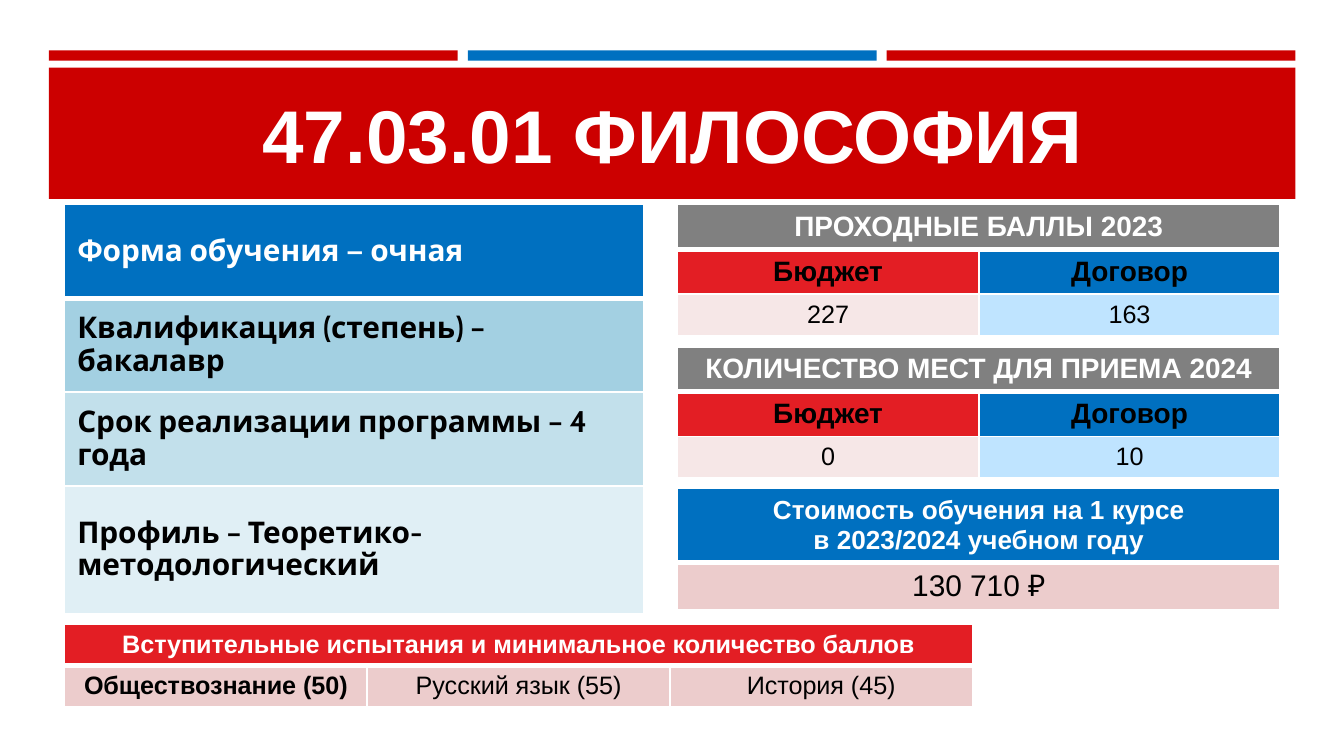
from lxml import etree
from pptx import Presentation
from pptx.dml.color import RGBColor
from pptx.enum.shapes import MSO_SHAPE as SHAPE
from pptx.enum.text import MSO_ANCHOR as ANCHOR, PP_ALIGN as ALIGN
from pptx.oxml.ns import qn
from pptx.util import Pt

WHITE = RGBColor(0xFF, 0xFF, 0xFF)
BLACK = RGBColor(0, 0, 0)
CRIMSON = RGBColor(0xCC, 0, 0)
RED = RGBColor(0xE3, 0x1E, 0x24)
BLUE = RGBColor(0, 0x70, 0xC0)
GREY = RGBColor(0x80, 0x80, 0x80)
PINK = RGBColor(0xEC, 0xCC, 0xCC)
PALE_PINK = RGBColor(0xF6, 0xE7, 0xE7)
PALE_BLUE = RGBColor(0xBF, 0xE4, 0xFF)
TEALS = [RGBColor(0xA3, 0xD0, 0xE2), RGBColor(0xC2, 0xE0, 0xEB), RGBColor(0xE0, 0xEF, 0xF5)]

MARGINS = {"margin_left": Pt(6.8), "margin_right": Pt(6.8),
           "margin_top": Pt(3), "margin_bottom": Pt(3)}


def set_attrs(obj, values):
    for name, value in values.items():
        setattr(obj, name, value)


def write(tf, text, size, color, bold=True, font="Arial", align=ALIGN.CENTER, spacing=None):
    for i, line in enumerate(text.split("\n")):
        p = tf.paragraphs[0] if i == 0 else tf.add_paragraph()
        set_attrs(p, {"alignment": align, "line_spacing": spacing})
        r = p.add_run()
        r.text = line
        set_attrs(r.font, {"name": font, "size": Pt(size), "bold": bold})
        r.font.color.rgb = color


def set_borders(cell, row):
    """White rules, with a thick one between the header and the first row."""
    widths = {"L": 1, "R": 1, "T": 3 if row == 1 else 1, "B": 3 if row == 0 else 1}
    tcPr = cell._tc.get_or_add_tcPr()
    for side, width in widths.items():
        ln = etree.SubElement(tcPr, qn(f"a:ln{side}"), w=str(Pt(width)))
        fill = etree.SubElement(ln, qn("a:solidFill"))
        etree.SubElement(fill, qn("a:srgbClr"), val=str(WHITE))


def add_grid(s, box, heights, rows):
    """rows holds lists of (text, fill, format); a short row is merged across."""
    x, y, w = box
    n_cols = max(len(row) for row in rows)
    table = s.shapes.add_table(len(rows), n_cols, Pt(x), Pt(y), Pt(w), Pt(sum(heights))).table
    table.horz_banding = False
    for col in table.columns:
        col.width = Pt(w / n_cols)
    for i, (row, height) in enumerate(zip(rows, heights)):
        table.rows[i].height = Pt(height)
        for j in range(n_cols):
            cell = table.cell(i, j)
            set_borders(cell, i)
            cell.fill.solid()
            cell.fill.fore_color.rgb = row[min(j, len(row) - 1)][1]
        if len(row) < n_cols:
            table.cell(i, 0).merge(table.cell(i, n_cols - 1))
        for j, (text, _, fmt) in enumerate(row):
            cell = table.cell(i, j)
            set_attrs(cell, {"vertical_anchor": ANCHOR.MIDDLE, **MARGINS})
            write(cell.text_frame, text, **fmt)


def add_bar(s, x, y, w, h, color):
    sp = s.shapes.add_shape(SHAPE.RECTANGLE, Pt(x), Pt(y), Pt(w), Pt(h))
    sp.shadow.inherit = False
    sp.fill.solid()
    sp.fill.fore_color.rgb = color
    sp.line.fill.background()


def add_header(s, x, y, w, title):
    # Three accent bars over the title band
    gap = 5.4
    bar_w = (w - 2 * gap) / 3
    for i, color in enumerate([CRIMSON, BLUE, CRIMSON]):
        add_bar(s, x + i * (bar_w + gap), y, bar_w, 5.5, color)
    add_bar(s, x, y + 9.2, w, 70.4, CRIMSON)
    # Title
    tb = s.shapes.add_textbox(Pt(x + 8.4), Pt(y + 14.8), Pt(w - 16.8), Pt(59.8))
    tf = tb.text_frame
    set_attrs(tf, {"word_wrap": True, "vertical_anchor": ANCHOR.MIDDLE})
    write(tf, title, 40, WHITE)


def add_programme(s, box):
    lines = ["Форма обучения — очная", "Квалификация (степень) – бакалавр",
             "Срок реализации программы – 4 года", "Профиль – Теоретико-методологический"]
    fmt = {"size": 16, "font": "Cabin", "align": ALIGN.LEFT, "spacing": 0.9}
    rows = [[(text, fill, {**fmt, "color": BLACK if i else WHITE})]
            for i, (text, fill) in enumerate(zip(lines, [BLUE, *TEALS]))]
    add_grid(s, box, [50.3, 50.3, 50.3, 68.4], rows)


def add_places(s, box, heading, budget, contract):
    label = {"size": 15, "color": BLACK}
    value = {"size": 13.5, "color": BLACK, "bold": False}
    add_grid(s, box, [23.6, 23.6, 22.3], [
        [(heading, GREY, {"size": 15, "color": WHITE})],
        [("Бюджет", RED, label), ("Договор", BLUE, label)],
        [(budget, PALE_PINK, value), (contract, PALE_BLUE, value)],
    ])


def add_cost(s, box):
    add_grid(s, box, [38.4, 24.6], [
        [("Стоимость обучения на 1 курсе\nв 2023/2024 учебном году", BLUE,
          {"size": 14, "color": WHITE})],
        [("130 710 ₽", PINK, {"size": 16, "color": BLACK, "bold": False})],
    ])


def add_exams(s, box):
    exams = ["Обществознание (50)", "Русский язык (55)", "История (45)"]
    add_grid(s, box, [21.9, 22.1], [
        [("Вступительные испытания и минимальное количество баллов", RED,
          {"size": 13.5, "color": WHITE})],
        [(exam, PINK, {"size": 13.5, "color": BLACK, "bold": i == 0})
         for i, exam in enumerate(exams)],
    ])


def main():
    prs = Presentation()
    set_attrs(prs, {"slide_width": Pt(720), "slide_height": Pt(405)})
    s = prs.slides.add_slide(prs.slide_layouts[6])
    left, right, top, right_w = 34.6, 362.9, 109.6, 323
    add_header(s, 26.2, 27, 667.8, "47.03.01 ФИЛОСОФИЯ")
    add_programme(s, (left, top, 310.3))
    add_exams(s, (left, 334.4, 486.5))
    add_places(s, (right, top, right_w), "ПРОХОДНЫЕ БАЛЛЫ 2023", "227", "163")
    add_places(s, (right, 185.8, right_w), "КОЛИЧЕСТВО МЕСТ ДЛЯ ПРИЕМА 2024", "0", "10")
    add_cost(s, (right, 261.7, right_w))
    prs.save("out.pptx")


if __name__ == "__main__":
    main()
